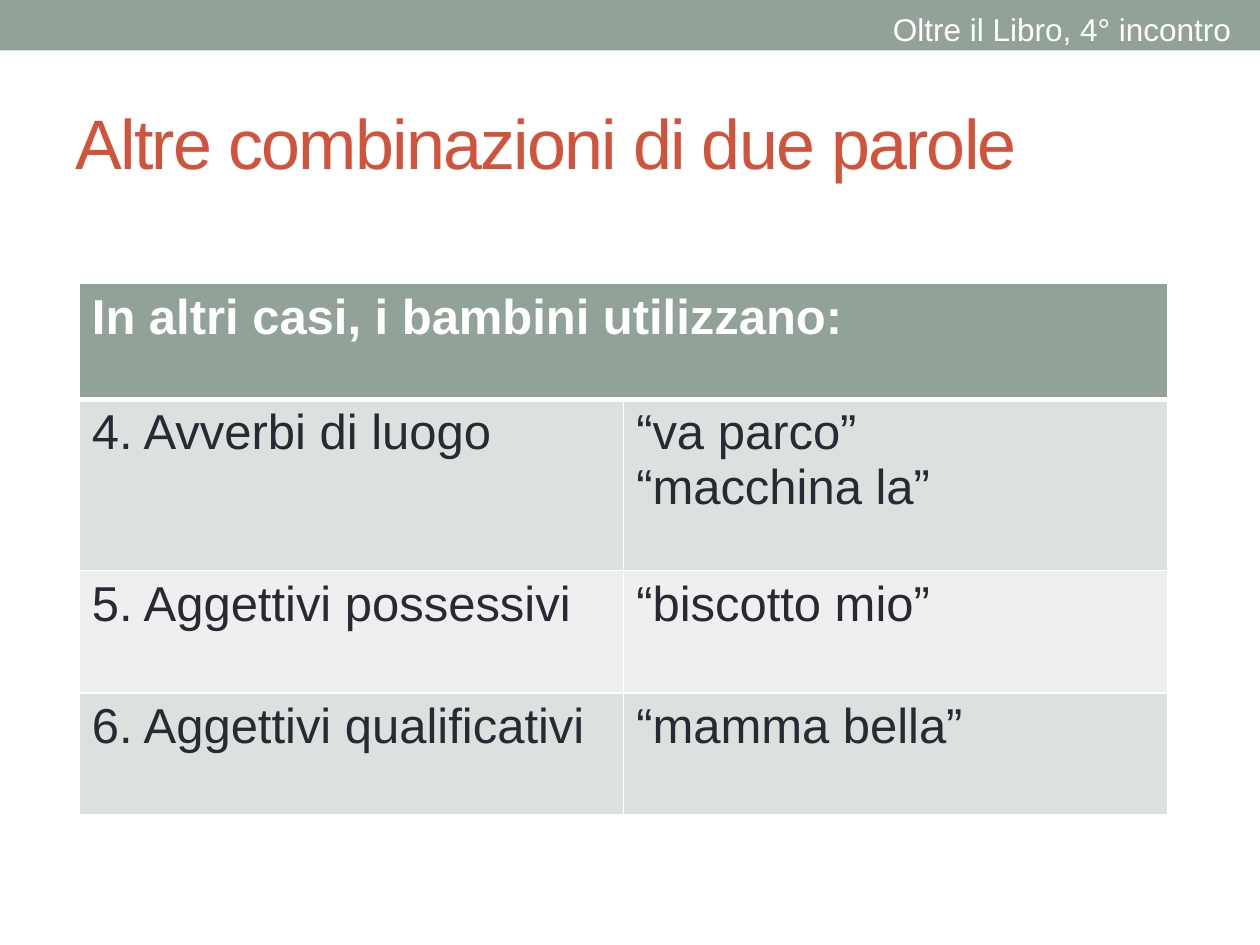
from dataclasses import dataclass

from lxml import etree
from pptx import Presentation
from pptx.dml.color import RGBColor
from pptx.enum.shapes import MSO_SHAPE
from pptx.enum.text import MSO_ANCHOR, PP_ALIGN
from pptx.oxml.ns import qn
from pptx.util import Inches, Pt

RECTANGLE = MSO_SHAPE.RECTANGLE
TOP, MIDDLE = MSO_ANCHOR.TOP, MSO_ANCHOR.MIDDLE
LEFT, RIGHT = PP_ALIGN.LEFT, PP_ALIGN.RIGHT

FONT = "Arial"
WHITE, SAGE, RED, INK = "FFFFFF", "93A299", "D2533C", "292934"
BANDS = ("DCE0DE", "EEF0EF")
COLUMN_WIDTH = 4.32
HEADER_HEIGHT = 0.92


@dataclass
class Category:
    name: str
    examples: str
    height: float


CATEGORIES = [
    Category("4. Avverbi di luogo", "“va parco”\n“macchina la”", 1.36),
    Category("5. Aggettivi possessivi", "“biscotto mio”", 0.97),
    Category("6. Aggettivi qualificativi", "“mamma bella”", 0.97),
]


def paint(target, color: str) -> None:
    target.solid()
    target.fore_color.rgb = RGBColor.from_string(color)


def write(frame, text: str, *, size: float, color: str, bold: bool = False,
          align=LEFT, spacing: float = 0) -> None:
    frame.text = text
    for para in frame.paragraphs:
        para.alignment = align
        for span in para.runs:
            span.font.name = FONT
            span.font.size = Pt(size)
            span.font.bold = bold
            paint(span.font.fill, color)
            if spacing:
                span.font._element.set("spc", str(int(spacing * 100)))


def add_text(page, text: str, left: float, top: float, width: float, height: float,
             *, anchor=TOP, wrap: bool = True, **text_format) -> None:
    box = page.shapes.add_textbox(Inches(left), Inches(top), Inches(width), Inches(height))
    box.text_frame.word_wrap = wrap
    box.text_frame.vertical_anchor = anchor
    write(box.text_frame, text, **text_format)


def add_border(cell, side: str, points: float) -> None:
    properties = cell._tc.get_or_add_tcPr()
    line = etree.SubElement(properties, qn(f"a:ln{side}"), w=str(Pt(points)))
    fill = etree.SubElement(line, qn("a:solidFill"))
    etree.SubElement(fill, qn("a:srgbClr"), val=WHITE)


def fill_cell(cell, text: str, background: str, *, color: str = INK,
              bold: bool = False, top: float = 1, bottom: float = 1) -> None:
    write(cell.text_frame, text, size=28, color=color, bold=bold)
    for side, points in (("L", 1), ("R", 1), ("T", top), ("B", bottom)):
        add_border(cell, side, points)
    paint(cell.fill, background)


def add_category_table(page, heading: str, categories: list[Category]) -> None:
    heights = [HEADER_HEIGHT] + [category.height for category in categories]
    table = page.shapes.add_table(len(heights), 2, Inches(0.63), Inches(2.25),
                                  Inches(2 * COLUMN_WIDTH), Inches(sum(heights))).table
    for column in table.columns:
        column.width = Inches(COLUMN_WIDTH)
    for row, height in zip(table.rows, heights):
        row.height = Inches(height)
    table.cell(0, 0).merge(table.cell(0, 1))
    for column, text in enumerate((heading, "")):
        fill_cell(table.cell(0, column), text, SAGE, color=WHITE, bold=True, bottom=3)
    for index, category in enumerate(categories):
        for column, text in enumerate((category.name, category.examples)):
            fill_cell(table.cell(index + 1, column), text, BANDS[index % 2],
                      top=1 if index else 3)


def main() -> None:
    deck = Presentation()
    deck.slide_width, deck.slide_height = Inches(10), Inches(7.5)
    page = deck.slides.add_slide(deck.slide_layouts[6])
    paint(page.background.fill, WHITE)

    banner = page.shapes.add_shape(RECTANGLE, 0, 0, deck.slide_width, Inches(0.4))
    banner.shadow.inherit = False
    paint(banner.fill, SAGE)
    banner.line.fill.background()

    add_text(page, "Altre combinazioni di due parole", 0.5, 0.58, 9, 1.08,
             anchor=MIDDLE, size=40, color=RED, spacing=-1)
    add_category_table(page, "In altri casi, i bambini utilizzano:", CATEGORIES)
    add_text(page, "Oltre il Libro, 4° incontro", 6.96, 0.03, 2.91, 0.4,
             wrap=False, size=18, color=WHITE, align=RIGHT)
    deck.save("out.pptx")


if __name__ == "__main__":
    main()
